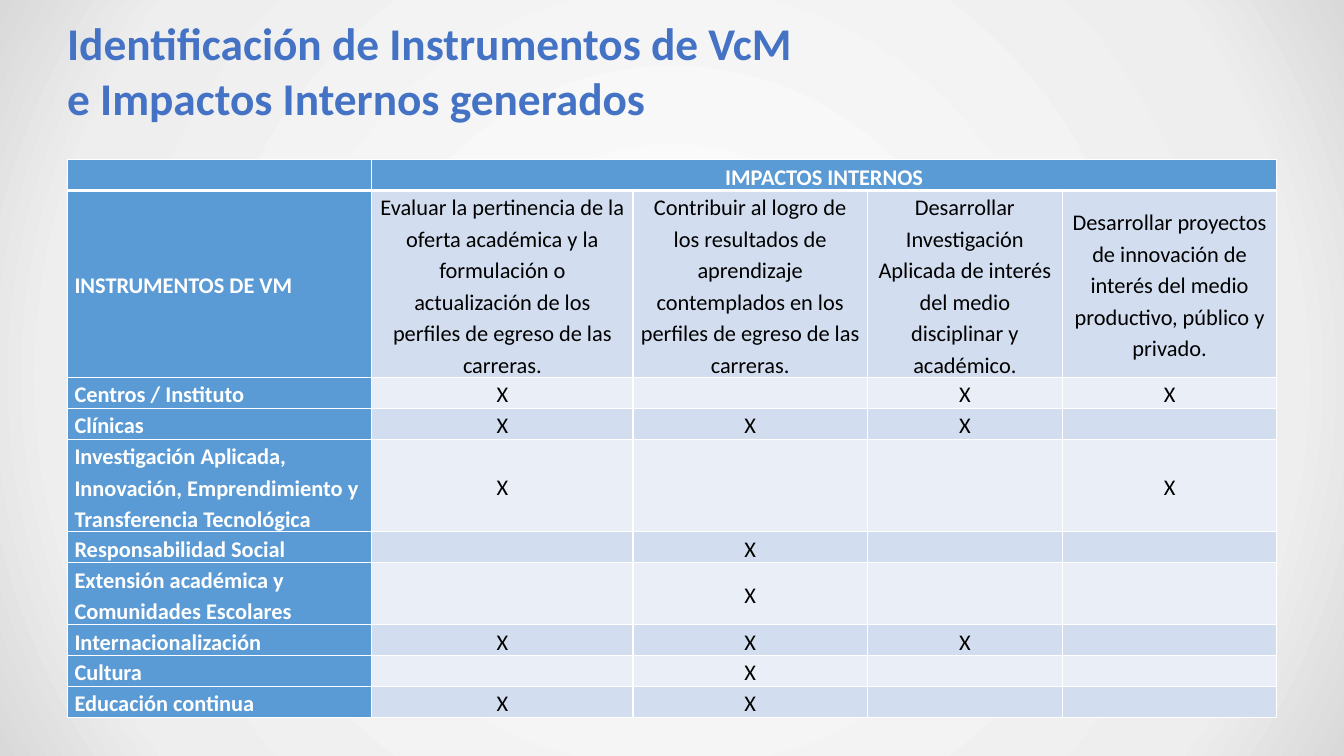
from dataclasses import dataclass

from pptx import Presentation
from pptx.dml.color import RGBColor
from pptx.enum.text import MSO_ANCHOR, PP_ALIGN
from pptx.oxml import parse_xml
from pptx.oxml.ns import nsdecls, qn
from pptx.slide import Slide
from pptx.table import _Cell
from pptx.text.text import TextFrame
from pptx.util import Emu, Pt

BLUE, WHITE, BLACK = "5B9BD5", "FFFFFF", "000000"
TITLE_BLUE = "4472C4"
BANDS = ("EAEFF7", "D2DEEF")
BACKGROUND_STOPS = ((0, "FFFFFF"), (81, "EEEEEE"), (100, "D9D9D9"))
TITLE = "Identificación de Instrumentos de VcM \ne Impactos Internos generados"
LEFT, WIDTH = 64, 1152
TABLE_TOP = 152
COLUMN_WIDTHS = (290, 249, 223, 186, 204)
LINE_HEIGHT = 30


@dataclass(frozen=True)
class Instrument:
    """A table row: its label, its impact cells and its number of text lines."""
    label: str
    impacts: tuple[str, ...]
    lines: int = 1


ROWS = (
    Instrument("", ("IMPACTOS INTERNOS", "", "", "")),
    Instrument("INSTRUMENTOS DE VM", (
        "Evaluar la pertinencia de la oferta académica y la formulación o "
        "actualización de los perfiles de egreso de las carreras.",
        "Contribuir al logro de los resultados de aprendizaje contemplados en los "
        "perfiles de egreso de las carreras.",
        "Desarrollar Investigación Aplicada de interés del medio disciplinar y académico.",
        "Desarrollar proyectos de innovación de interés del medio productivo, público y privado.",
    ), 6),
    Instrument("Centros / Instituto", ("X", "", "X", "X")),
    Instrument("Clínicas", ("X", "X", "X", "")),
    Instrument("Investigación Aplicada, Innovación, Emprendimiento y Transferencia Tecnológica",
               ("X", "", "", "X"), 3),
    Instrument("Responsabilidad Social", ("", "X", "", "")),
    Instrument("Extensión académica y Comunidades Escolares", ("", "X", "", ""), 2),
    Instrument("Internacionalización", ("X", "X", "X", "")),
    Instrument("Cultura", ("", "X", "", "")),
    Instrument("Educación continua", ("X", "X", "", "")),
)


def px(length: int) -> Emu:
    """Convert px to EMU."""
    return Emu(length * 9525)


def color(value: str) -> RGBColor:
    """Return the colour of a hex string."""
    return RGBColor.from_string(value)


def write(frame: TextFrame, text: str, *, size: float, fill: str, bold: bool = False,
          align: PP_ALIGN = PP_ALIGN.LEFT, spacing: float = 1.0) -> None:
    """Write one formatted paragraph, with a line break at each newline."""
    paragraph = frame.paragraphs[0]
    paragraph.alignment = align
    paragraph.line_spacing = spacing
    for index, line in enumerate(text.split("\n")):
        if index:
            paragraph.add_line_break()
        run = paragraph.add_run()
        run.text = line
        run.font.name = "Calibri"
        run.font.size = Pt(size)
        run.font.bold = bold
        run.font.color.rgb = color(fill)


def set_background(slide: Slide) -> None:
    """Fill the slide with a circular gradient."""
    stops = "".join(f'<a:gs pos="{position * 1000}"><a:srgbClr val="{value}"/></a:gs>'
                    for position, value in BACKGROUND_STOPS)
    background = parse_xml(
        f'<p:bg {nsdecls("p", "a")}><p:bgPr><a:gradFill><a:gsLst>{stops}</a:gsLst>'
        '<a:path path="circle"><a:fillToRect l="50000" t="50000" r="50000" b="50000"/></a:path>'
        '</a:gradFill><a:effectLst/></p:bgPr></p:bg>')
    slide.element.find(qn("p:cSld")).insert(0, background)


def set_borders(cell: _Cell, top: int, bottom: int) -> None:
    """Give a cell white borders, with the top and bottom widths in points."""
    properties = cell._tc.get_or_add_tcPr()
    for side, width in (("L", 1), ("R", 1), ("T", top), ("B", bottom)):
        properties.append(parse_xml(
            f'<a:ln{side} {nsdecls("a")} w="{Pt(width)}"><a:solidFill>'
            f'<a:srgbClr val="{WHITE}"/></a:solidFill></a:ln{side}>'))


def add_title(slide: Slide) -> None:
    """Add the slide title."""
    frame = slide.shapes.add_textbox(px(LEFT), px(29), px(WIDTH), px(75)).text_frame
    frame.word_wrap = True
    frame.vertical_anchor = MSO_ANCHOR.MIDDLE
    frame.margin_left = frame.margin_right = 0
    frame.margin_top = frame.margin_bottom = px(7)
    write(frame, TITLE, size=32.4, fill=TITLE_BLUE, bold=True)


def fill_cell(cell: _Cell, text: str, row: int, column: int) -> None:
    """Format a cell by its place in the table and write its text."""
    heading = row == 0 or column == 0
    set_borders(cell, top=3 if row == 1 else 1, bottom=3 if row == 0 else 1)
    cell.fill.solid()
    cell.fill.fore_color.rgb = color(BLUE if heading else BANDS[row % 2])
    cell.margin_left = cell.margin_right = px(7)
    cell.margin_top = cell.margin_bottom = 0
    cell.vertical_anchor = MSO_ANCHOR.MIDDLE if row else MSO_ANCHOR.TOP
    if text:
        write(cell.text_frame, text, size=16, fill=WHITE if heading else BLACK, bold=heading,
              align=PP_ALIGN.CENTER if column else PP_ALIGN.LEFT, spacing=1.15)


def add_impact_table(slide: Slide) -> None:
    """Add the table of instruments and their internal impacts."""
    heights = [instrument.lines * LINE_HEIGHT - 2 for instrument in ROWS]
    table = slide.shapes.add_table(len(ROWS), len(COLUMN_WIDTHS), px(LEFT), px(TABLE_TOP),
                                   px(WIDTH), px(sum(heights))).table
    for column, width in enumerate(COLUMN_WIDTHS):
        table.columns[column].width = px(width)
    for row, (instrument, height) in enumerate(zip(ROWS, heights)):
        table.rows[row].height = px(height)
        for column, text in enumerate((instrument.label, *instrument.impacts)):
            fill_cell(table.cell(row, column), text, row, column)
    table.cell(0, 1).merge(table.cell(0, len(COLUMN_WIDTHS) - 1))


def main() -> None:
    """Build and save the presentation."""
    presentation = Presentation()
    presentation.slide_width, presentation.slide_height = px(1280), px(720)
    slide = presentation.slides.add_slide(presentation.slide_layouts[6])
    set_background(slide)
    add_title(slide)
    add_impact_table(slide)
    presentation.save("out.pptx")


if __name__ == "__main__":
    main()
